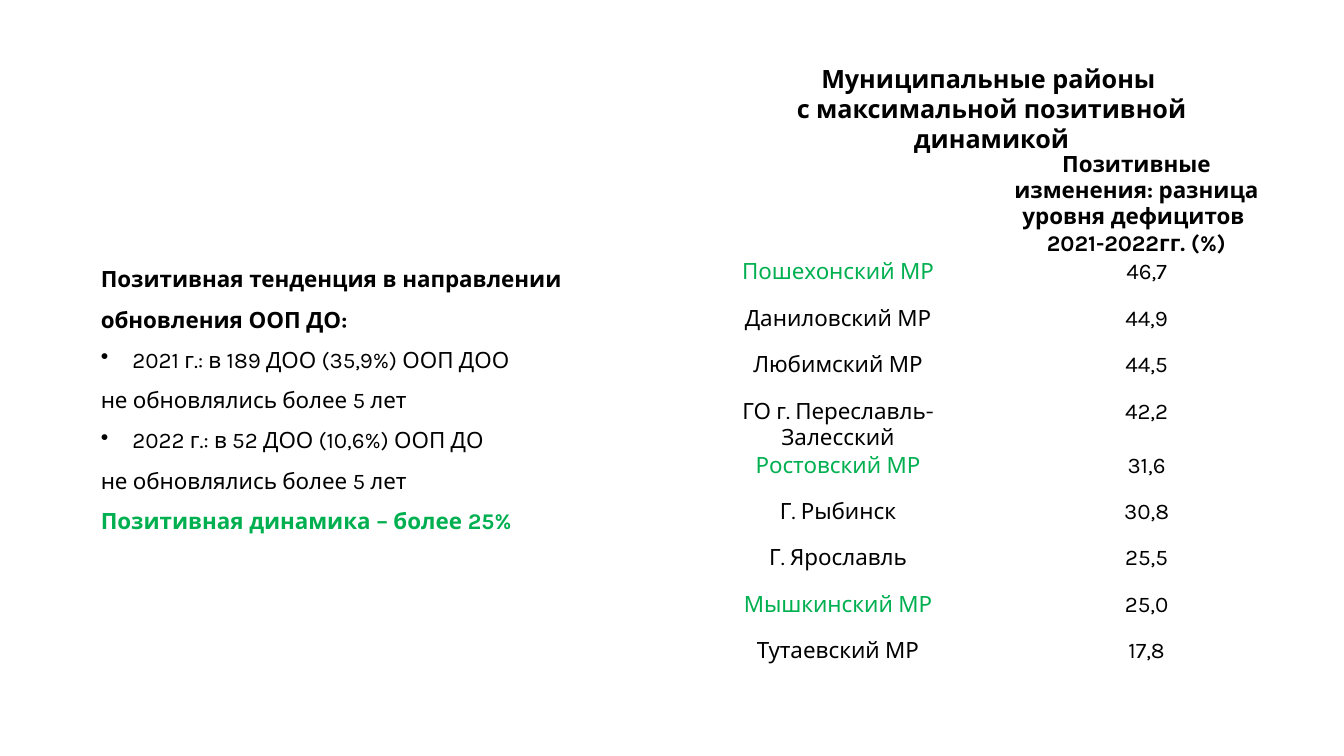
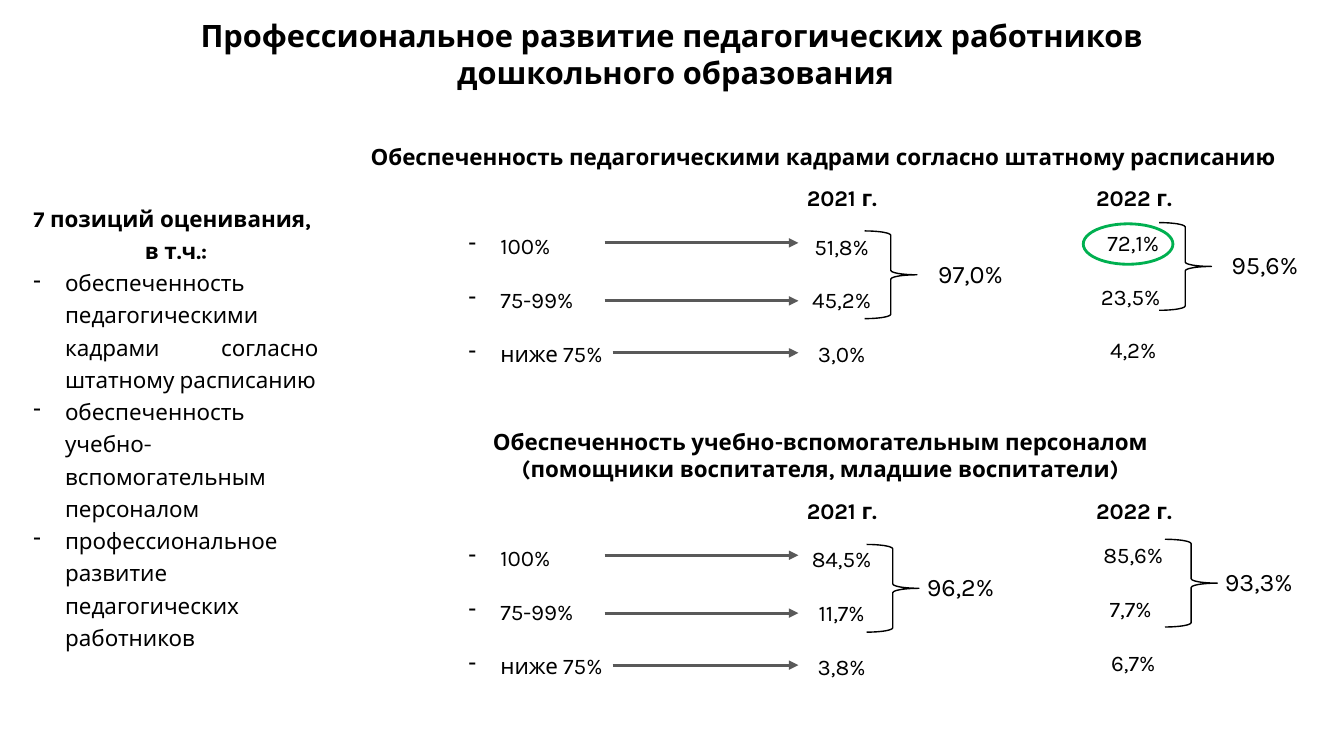
from pptx import Presentation
from pptx.dml.color import RGBColor
from pptx.enum.shapes import MSO_CONNECTOR, MSO_SHAPE
from pptx.enum.text import PP_ALIGN
from pptx.oxml.ns import qn
from pptx.util import Cm, Pt
from lxml import etree

BLACK = RGBColor(0x00, 0x00, 0x00)
GREEN = RGBColor(0x00, 0xB0, 0x50)
GREY = RGBColor(0x59, 0x59, 0x59)
FONT = "Karla"
MID, JUST = PP_ALIGN.CENTER, PP_ALIGN.JUSTIFY
OVAL, BRACE = MSO_SHAPE.OVAL, MSO_SHAPE.RIGHT_BRACE
LINE = MSO_CONNECTOR.STRAIGHT
LEFT = 1
HANG = Cm(0.8)

HEAD = {"alignment": MID, "bold": True}
DOT = {"alignment": JUST, "bullet": "•"}
DASH = {"bullet": "-"}
GAP = {"space_before": Pt(19.3)}
PARA = ("alignment", "line_spacing", "space_before")

# region, change in percent, highlighted
REGIONS = [
    ("Пошехонский МР", "46,7", True),
    ("Даниловский МР", "44,9", False),
    ("Любимский МР", "44,5", False),
    ("ГО г. Переславль-Залесский", "42,2", False),
    ("Ростовский МР", "31,6", True),
    ("Г. Рыбинск", "30,8", False),
    ("Г. Ярославль", "25,5", False),
    ("Мышкинский МР", "25,0", True),
    ("Тутаевский МР", "17,8", False),
]
LEVELS = ["100%", "75-99%", "ниже 75%"]


def write(frame, lines, **base):
    """Fill a frame; a line is a string or a (string, format) pair."""
    frame.word_wrap = True
    for num, line in enumerate(lines):
        text, own = (line, {}) if isinstance(line, str) else line
        form = {"size": Pt(16), "bold": False, "name": FONT, "color": BLACK,
                **base, **own}
        para = frame.paragraphs[0] if num == 0 else frame.add_paragraph()
        para.text = text
        if num == 0:
            form.pop("space_before", None)
        color, mark = form.pop("color"), form.pop("bullet", None)
        for run in para.runs:
            run.font.color.rgb = color
        for key, value in form.items():
            if key in PARA:
                setattr(para, key, value)
            else:
                for run in para.runs:
                    setattr(run.font, key, value)
        if mark:
            props = para._p.get_or_add_pPr()
            props.set("marL", str(HANG))
            props.set("indent", str(-HANG))
            etree.SubElement(props, qn("a:buChar")).set("char", mark)


def add_text(slide, place, lines, flush=False, **base):
    """Add a text box; flush removes its inner margins."""
    box = slide.shapes.add_textbox(*map(Cm, place))
    if flush:
        for side in ("left", "top", "right", "bottom"):
            setattr(box.text_frame, "margin_" + side, 0)
    write(box.text_frame, lines, **base)
    return box


def outline(slide, kind, place, color, width):
    shape = slide.shapes.add_shape(kind, *map(Cm, place))
    shape.shadow.inherit = False
    shape.fill.background()
    shape.line.color.rgb = color
    shape.line.width = Pt(width)


def arrow(slide, start, end, top):
    line = slide.shapes.add_connector(LINE, *map(Cm, (start, top, end, top)))
    line.line.color.rgb = GREY
    line.line.width = Pt(2.25)
    props = line._element.spPr
    etree.SubElement(props.find(qn("a:ln")), qn("a:tailEnd")).set(
        "type", "triangle")
    etree.SubElement(props, qn("a:effectLst"))
    return line


def add_table(slide, left, top):
    rows = len(REGIONS) + 1
    table = slide.shapes.add_table(
        rows, 2, Cm(left), Cm(top), Cm(15.04), Cm(14.07)).table
    table.first_row = table.horz_banding = False
    for col in table.columns:
        col.width = Cm(7.52)
    for num, row in enumerate(table.rows):
        row.height = Cm(1.17 if num else 2.34)
    for cell in table.iter_cells():
        cell.fill.background()
        cell.margin_left = cell.margin_right = Cm(0.1)
        cell.margin_top = cell.margin_bottom = 0
    write(table.cell(0, 1).text_frame,
          ["Позитивные изменения: разница уровня дефицитов ",
           "2021-2022гг. (%)"], **HEAD)
    for num, (name, value, green) in enumerate(REGIONS, 1):
        write(table.cell(num, 0).text_frame, [name], alignment=MID,
              color=GREEN if green else BLACK)
        frame = table.cell(num, 1).text_frame
        write(frame, [value], alignment=MID)
        frame.paragraphs[0]._p.get_or_add_pPr().set("marL", str(Cm(0.51)))


def add_year(slide, top, year, left, shares, place):
    """Add a year label with its column of shares."""
    add_text(slide, (left, top, 2.34, 0.68), [year + " г. "], True, **HEAD)
    return add_text(slide, place, shares, alignment=MID, **GAP)


def add_sum(slide, left, top, gap, total):
    """Add a brace and, a gap further right, the total it stands for."""
    outline(slide, BRACE, (left, top, 1.32, 2.21), BLACK, 1)
    add_text(slide, (left + gap, top + 0.56, 2.39, 1.02), [total],
             alignment=MID, size=Pt(18))


def add_block(slide, top, old, new):
    """Add the levels, their arrows and the shares for both years."""
    add_text(slide, (11.56, top + 1.07, 4.75, 5.05), LEVELS, **DASH, **GAP)
    shares = add_year(slide, top, "2021", 20.12, old,
                      (20.12, top + 1.09, 2.18, 3.68))
    add_year(slide, top, "2022", 27.48, new,
             (27.38, top + 0.99, 2.36, 3.68))
    for start, drop in ((15.24, 1.47), (15.24, 2.93), (15.44, 4.24)):
        line = arrow(slide, start, 20.12, top + drop)
        if drop == 2.93:
            line.end_connect(shares, LEFT)


def trend_slide(slide):
    add_text(slide, (2.54, 6.35, 13.34, 8.2), [
        ("Позитивная тенденция в направлении обновления ООП ДО:",
         {"bold": True}),
        ("2021 г.: в 189 ДОО (35,9%) ООП ДОО ", DOT),
        ("не обновлялись более 5 лет", {"alignment": JUST}),
        ("2022 г.: в 52 ДОО (10,6%) ООП ДО ", DOT),
        ("не обновлялись более 5 лет", {"alignment": JUST}),
        ("Позитивная динамика – более 25%", {"bold": True, "color": GREEN}),
    ], True, line_spacing=1.5)
    add_table(slide, 17.36, 3.83)
    add_text(slide, (17.99, 1.47, 14, 1.8),
             ["Муниципальные районы ", "с максимальной позитивной динамикой"],
             size=Pt(18), **HEAD)


def staff_slide(slide):
    add_text(slide, (1.47, 0.43, 31.12, 1.88),
             ["Профессиональное развитие педагогических работников \v"
              "дошкольного образования"], True, size=Pt(22), **HEAD)
    add_text(slide, (0.84, 5.03, 7.19, 11.4), [
        ("7 позиций оценивания, ", {"bold": True}),
        ("в т.ч.:", HEAD),
        ("обеспеченность педагогическими кадрами согласно "
         "штатному расписанию", DASH),
        ("обеспеченность учебно-вспомогательным персоналом", DASH),
        ("профессиональное развитие педагогических работников ", DASH),
    ], True, alignment=JUST, line_spacing=1.2)

    add_text(slide, (9.32, 3.61, 22.86, 0.69),
             ["Обеспеченность педагогическими кадрами "
              "согласно штатному расписанию"], True, **HEAD)
    add_block(slide, 4.65, ["51,8%", "45,2%", "3,0%"],
              ["72,1%", "23,5% ", "4,2%"])
    outline(slide, OVAL, (27.3, 5.64, 2.26, 1.02), GREEN, 2)

    add_text(slide, (9.32, 10.8, 22.86, 1.37),
             ["Обеспеченность учебно-вспомогательным персоналом ",
              "(помощники воспитателя, младшие воспитатели) "], True, **HEAD)
    add_block(slide, 12.52, ["84,5%", "11,7%", "3,8%"],
              ["85,6%", "7,7% ", "6,7%"])

    for left, top, gap, total in (
            (21.79, 5.82, 1.47, "97,0%"), (29.21, 5.61, 1.47, "95,6%"),
            (21.84, 13.72, 1.17, "96,2%"), (29.36, 13.59, 1.17, "93,3%")):
        add_sum(slide, left, top, gap, total)


def main():
    deck = Presentation()
    deck.slide_width, deck.slide_height = Cm(33.87), Cm(19.05)
    blank = deck.slide_layouts[6]
    for build in (trend_slide, staff_slide):
        build(deck.slides.add_slide(blank))
    deck.save("out.pptx")


if __name__ == "__main__":
    main()
